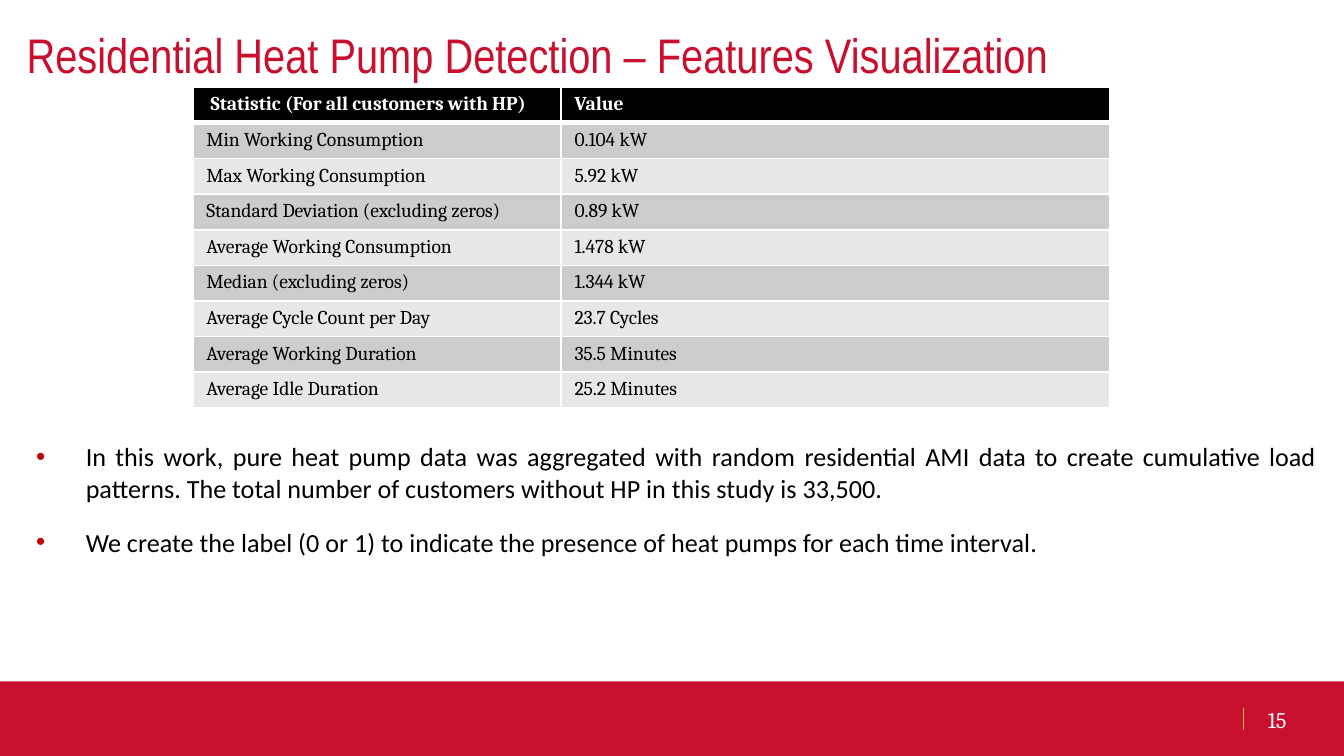
from dataclasses import dataclass

from lxml import etree
from pptx import Presentation
from pptx import util as u
from pptx.dml.color import RGBColor
from pptx.enum import shapes, text
from pptx.oxml import ns

PX = 4572  # EMU per px, 200 px to the inch


@dataclass(frozen=True)
class Theme:
    red: str = "C8102E"
    bullet: str = "C00000"
    gold: str = "F1BE48"
    white: str = "FFFFFF"
    black: str = "000000"
    bands: tuple = ("CCCCCC", "E7E7E7")
    title_font: str = "Arial Narrow"
    body_font: str = "Calibri"
    table_font: str = "Cambria"
    title_size: float = 26
    body_size: float = 14
    table_size: float = 10.5
    number_size: float = 12


THEME = Theme()

TITLE = "Residential Heat Pump Detection – Features Visualization"
STATISTICS = [
    (" Statistic (For all customers with HP)", "Value"),
    ("Min Working Consumption", "0.104 kW"),
    ("Max Working Consumption", "5.92 kW"),
    ("Standard Deviation (excluding zeros)", "0.89 kW"),
    ("Average Working Consumption", "1.478 kW"),
    ("Median (excluding zeros)", "1.344 kW"),
    ("Average Cycle Count per Day", "23.7 Cycles"),
    ("Average Working Duration", "35.5 Minutes"),
    ("Average Idle Duration", "25.2 Minutes"),
]
POINTS = [
    "In this work, pure heat pump data was aggregated with random residential AMI data "
    "to create cumulative load patterns. The total number of customers without HP in "
    "this study is 33,500.",
    "We create the label (0 or 1) to indicate the presence of heat pumps for each time interval.",
]


def emu(*lengths):
    return [u.Emu(length * PX) for length in lengths]


def rgb(color):
    return RGBColor.from_string(color)


def add_child(parent, tag, **attributes):
    child = etree.SubElement(parent, ns.qn(tag))
    for name, value in attributes.items():
        child.set(name, str(value))
    return child


def write(paragraph, words, *, font, size, color, bold=False, align=None):
    run = paragraph.add_run()
    run.text = words
    run.font.name = font
    run.font.size = u.Pt(size)
    run.font.bold = bold
    run.font.color.rgb = rgb(color)
    if align is not None:
        paragraph.alignment = align


def add_text_frame(slide, box, anchor=text.MSO_ANCHOR.TOP):
    frame = slide.shapes.add_textbox(*emu(*box)).text_frame
    frame.word_wrap = True
    frame.vertical_anchor = anchor
    return frame


def add_footer(slide, box, number):
    left, top, width, height = box
    band = slide.shapes.add_shape(shapes.MSO_SHAPE.RECTANGLE, *emu(*box))
    band.shadow.inherit = False
    band.fill.solid()
    band.fill.fore_color.rgb = rgb(THEME.red)
    band.line.fill.background()

    rule_x = left + width - 150
    rule = slide.shapes.add_connector(
        shapes.MSO_CONNECTOR.STRAIGHT, *emu(rule_x, top + 40, rule_x, top + 72))
    rule.line.color.rgb = rgb(THEME.gold)
    rule.line.width = u.Pt(0.75)
    add_child(rule._element.spPr, "a:effectLst")

    frame = add_text_frame(slide, (rule_x + 17, top + 27, 116, 60), text.MSO_ANCHOR.MIDDLE)
    write(frame.paragraphs[0], number, font=THEME.table_font,
          size=THEME.number_size, color=THEME.white)


def add_title(slide, box):
    frame = add_text_frame(slide, box, text.MSO_ANCHOR.MIDDLE)
    write(frame.paragraphs[0], TITLE, font=THEME.title_font,
          size=THEME.title_size, color=THEME.red)


def set_borders(cell, **widths):
    """Draw white cell borders; keys are the sides L, R, T and B, values are points."""
    properties = cell._tc.get_or_add_tcPr()
    for side, width in widths.items():
        line = add_child(properties, f"a:ln{side}", w=u.Pt(width))
        add_child(add_child(line, "a:solidFill"), "a:srgbClr", val=THEME.white)


def add_statistics(slide, box, columns):
    frame = slide.shapes.add_table(len(STATISTICS), len(columns), *emu(*box))
    table = frame.table
    for column, width in zip(table.columns, emu(*columns)):
        column.width = width
    row_height = box[3] // len(STATISTICS)
    for i, values in enumerate(STATISTICS):
        header = i == 0
        table.rows[i].height = u.Emu(row_height * PX)
        for j, value in enumerate(values):
            cell = table.cell(i, j)
            set_borders(cell, L=1, R=1, T=3 if i == 1 else 1, B=3 if header else 1)
            cell.margin_top, cell.margin_bottom = emu(9, 9)
            cell.fill.solid()
            cell.fill.fore_color.rgb = rgb(
                THEME.black if header else THEME.bands[(i - 1) % 2])
            write(cell.text_frame.paragraphs[0], value, font=THEME.table_font,
                  size=THEME.table_size, bold=header,
                  color=THEME.white if header else THEME.black)


def add_bullet(paragraph, indent):
    properties = paragraph._p.get_or_add_pPr()
    properties.set("marL", str(indent * PX))
    properties.set("indent", str(-indent * PX))
    add_child(add_child(properties, "a:buClr"), "a:srgbClr", val=THEME.bullet)
    add_child(properties, "a:buFont", typeface="Arial")
    add_child(properties, "a:buChar", char="•")


def add_points(slide, box):
    frame = add_text_frame(slide, box)
    for i, point in enumerate(POINTS):
        paragraph = frame.add_paragraph() if i else frame.paragraphs[0]
        add_bullet(paragraph, 74)
        paragraph.space_before = u.Pt(6 if i else 0)
        paragraph.space_after = u.Pt(6)
        write(paragraph, point, font=THEME.body_font, size=THEME.body_size,
              color=THEME.black, align=text.PP_ALIGN.JUSTIFY)


def main():
    presentation = Presentation()
    presentation.slide_width, presentation.slide_height = emu(2000, 1125)
    slide = presentation.slides.add_slide(presentation.slide_layouts[6])
    add_footer(slide, (0, 1014, 2000, 111), "15")
    add_title(slide, (20, 29, 1898, 102))
    add_points(slide, (34, 646, 1946, 316))
    add_statistics(slide, (287, 130, 1364, 477), (548, 816))
    presentation.save("out.pptx")


if __name__ == "__main__":
    main()
